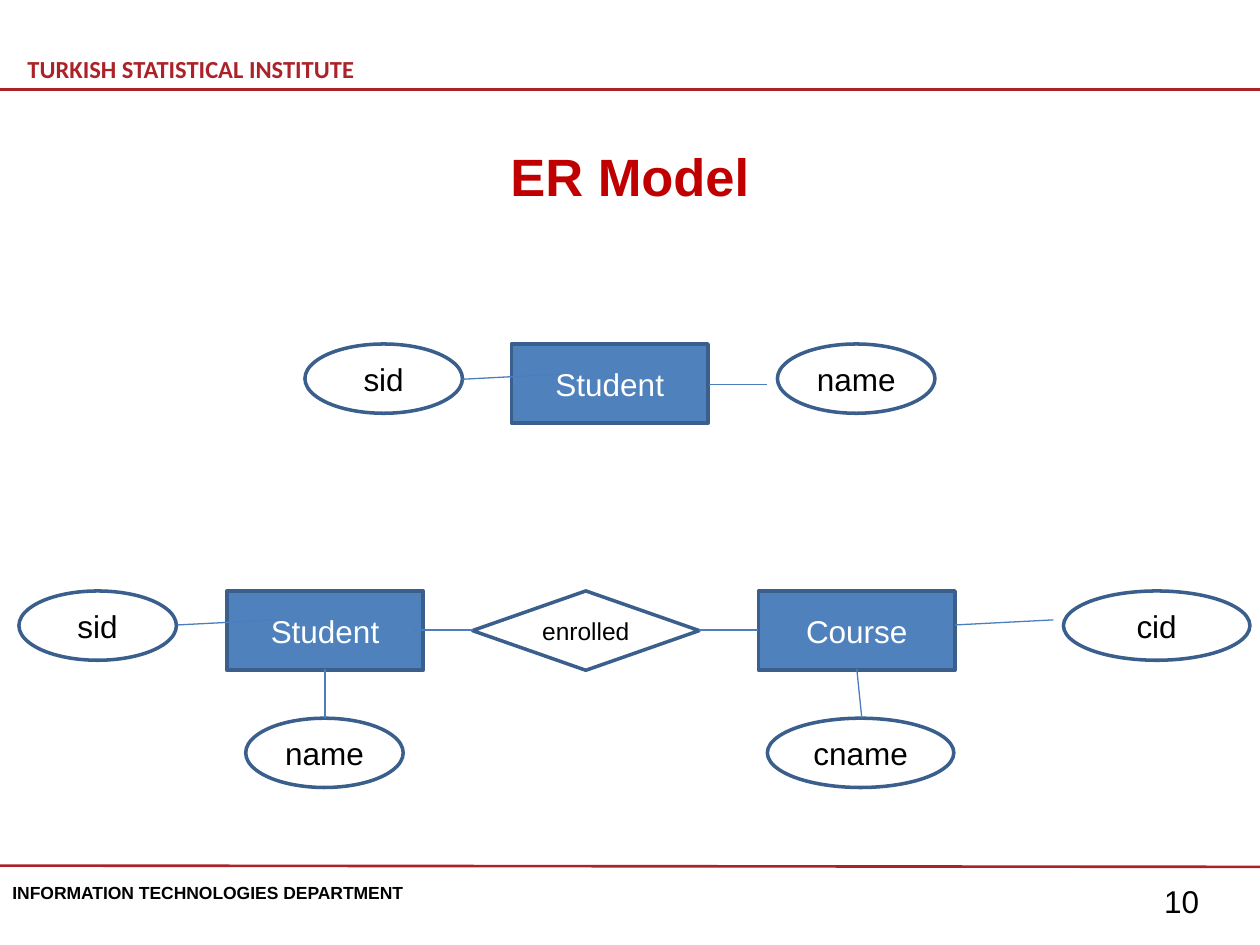
"""Build the ER model slide on a grid of 100 columns by 75 rows."""
from dataclasses import dataclass

from pptx import Presentation
from pptx.dml.color import RGBColor
from pptx.enum import shapes, text
from pptx.oxml import xmlchemy
from pptx.util import Inches, Pt

COLUMNS, ROWS = 100, 75
KINDS = shapes.MSO_SHAPE


@dataclass(frozen=True)
class Theme:
    """Colours, fonts, type sizes and line weights of the slide."""
    brand: str = "AB2328"
    title: str = "C00000"
    ink: str = "000000"
    paper: str = "FFFFFF"
    entity: str = "4F81BD"
    outline: str = "3A5F8C"
    link: str = "4B7EBC"
    font: str = "Arial"
    header_font: str = "Calibri"
    title_size: int = 30
    label_size: int = 18
    small_size: int = 14
    footer_size: int = 10
    outline_width: float = 2
    rule_width: float = 1.5
    link_width: float = 0.75


THEME = Theme()


@dataclass(frozen=True)
class Box:
    """An area of the page in grid columns and rows."""
    left: float
    top: float
    width: float
    height: float

    def inner(self, left, top, width, height):
        """Return an area placed relative to this one."""
        return Box(self.left + left, self.top + top, width, height)

    def point(self, column, row):
        """Return the slide position of a point in this area."""
        return across(self.left + column), down(self.top + row)

    def frame(self):
        """Return the slide position and size of this area."""
        return *self.point(0, 0), across(self.width), down(self.height)


def across(columns):
    """Convert columns to a slide length."""
    return Inches(10 * columns / COLUMNS)


def down(rows):
    """Convert rows to a slide length."""
    return Inches(7.5 * rows / ROWS)


def write(frame, words, size, colour, bold=False, font=THEME.font, align=None):
    """Write one run in the first paragraph of a text frame."""
    para = frame.paragraphs[0]
    para.alignment = align
    span = para.add_run()
    span.text = words
    span.font.name = font
    span.font.size = Pt(size)
    span.font.bold = bold
    span.font.color.rgb = RGBColor.from_string(colour)


def add_label(page, box, words, size, colour, wrap=True,
              anchor=text.MSO_ANCHOR.TOP, **style):
    """Add a text box."""
    frame = page.shapes.add_textbox(*box.frame()).text_frame
    frame.word_wrap = wrap
    frame.vertical_anchor = anchor
    write(frame, words, size, colour, **style)


def add_line(page, box, start, end, colour, width):
    """Draw a straight connector between two points of a box."""
    line = page.shapes.add_connector(
        shapes.MSO_CONNECTOR.STRAIGHT, *box.point(*start), *box.point(*end))
    line.line.color.rgb = RGBColor.from_string(colour)
    line.line.width = Pt(width)
    line._element.spPr.append(xmlchemy.OxmlElement("a:effectLst"))


def add_node(page, box, kind, words, fill=THEME.paper, colour=THEME.ink,
             size=THEME.label_size):
    """Draw one outlined and labelled diagram symbol."""
    node = page.shapes.add_shape(kind, *box.frame())
    node.shadow.inherit = False
    node.fill.solid()
    node.fill.fore_color.rgb = RGBColor.from_string(fill)
    node.line.color.rgb = RGBColor.from_string(THEME.outline)
    node.line.width = Pt(THEME.outline_width)
    node.text_frame.vertical_anchor = text.MSO_ANCHOR.MIDDLE
    write(node.text_frame, words, size, colour, align=text.PP_ALIGN.CENTER)


def add_entity(page, box, left, words):
    """Draw an entity rectangle at the top of a diagram."""
    add_node(page, box.inner(left, 0, 15.6, 6.3), KINDS.RECTANGLE, words,
             THEME.entity, THEME.paper)


def add_attribute(page, box, left, top, words, width=12.5):
    """Draw an attribute ellipse."""
    add_node(page, box.inner(left, top, width, 5.5), KINDS.OVAL, words)


def add_links(page, box, links):
    """Draw the thin links of a diagram."""
    for start, end in links:
        add_line(page, box, start, end, THEME.link, THEME.link_width)


def add_header(page, box):
    """Place the institute name above a rule."""
    add_label(page, box.inner(1.2, 3.5, 35.4, 3.9),
              "TURKISH STATISTICAL INSTITUTE", THEME.small_size, THEME.brand,
              anchor=text.MSO_ANCHOR.MIDDLE, bold=True, font=THEME.header_font)
    add_line(page, box, (0, box.height), (box.width, box.height),
             THEME.brand, THEME.rule_width)


def add_footer(page, box):
    """Place the department and page number below a rule."""
    add_line(page, box, (0, 0), (box.width, 0.1), THEME.brand, THEME.rule_width)
    add_label(page, box.inner(0, 0.8, 33.6, 2.7),
              "INFORMATION TECHNOLOGIES DEPARTMENT", THEME.footer_size,
              THEME.ink, wrap=False, bold=True)
    add_label(page, box.inner(91.4, 0.8, 7, 4), "10", THEME.label_size, THEME.ink)


def add_title(page, box):
    """Place the centred slide title."""
    add_label(page, box, "ER Model", THEME.title_size, THEME.title, bold=True,
              align=text.PP_ALIGN.CENTER)


def add_student_diagram(page, box):
    """Draw the student entity between its two attributes."""
    add_entity(page, box, 16.4, "Student")
    for left, words in ((0, "sid"), (37.5, "name")):
        add_attribute(page, box, left, 0, words)
    add_links(page, box, (((12.5, 2.8), (20.3, 2.4)),
                          ((32.1, 3.2), (36.7, 3.2))))


def add_enrolment_diagram(page, box):
    """Draw students and courses joined by the enrolled relationship."""
    lower = 10.1
    for left, words in ((16.5, "Student"), (58.7, "Course")):
        add_entity(page, box, left, words)
    for left, top, words in ((0, 0, "sid"), (18, lower, "name")):
        add_attribute(page, box, left, top, words)
    for left, top, words in ((59.4, lower, "cname"), (82.9, 0, "cid")):
        add_attribute(page, box, left, top, words, width=14.8)
    add_node(page, box.inner(36, 0, 18, 6.3), KINDS.FLOWCHART_DECISION,
             "enrolled", size=THEME.small_size)
    add_links(page, box, (((12.6, 2.7), (20.4, 2.3)),
                          ((24.3, 6.2), (24.3, lower)),
                          ((31.3, 3.1), (36, 3.1)),
                          ((54, 3.1), (58.7, 3.1)),
                          ((66.5, 6.2), (66.9, lower)),
                          ((74.3, 2.7), (82.1, 2.3))))


def main():
    """Build and save the deck."""
    deck = Presentation()
    deck.slide_width, deck.slide_height = across(COLUMNS), down(ROWS)
    page = deck.slides.add_slide(deck.slide_layouts[6])
    add_header(page, Box(0, 0, COLUMNS, 7.1))
    add_footer(page, Box(0, 68.7, COLUMNS, 6.3))
    add_title(page, Box(4.7, 10.9, 90.6, 6.1))
    add_student_diagram(page, Box(24.2, 27.3, 50, 6.3))
    add_enrolment_diagram(page, Box(1.5, 46.9, 97.7, 15.6))
    deck.save("out.pptx")


if __name__ == "__main__":
    main()
